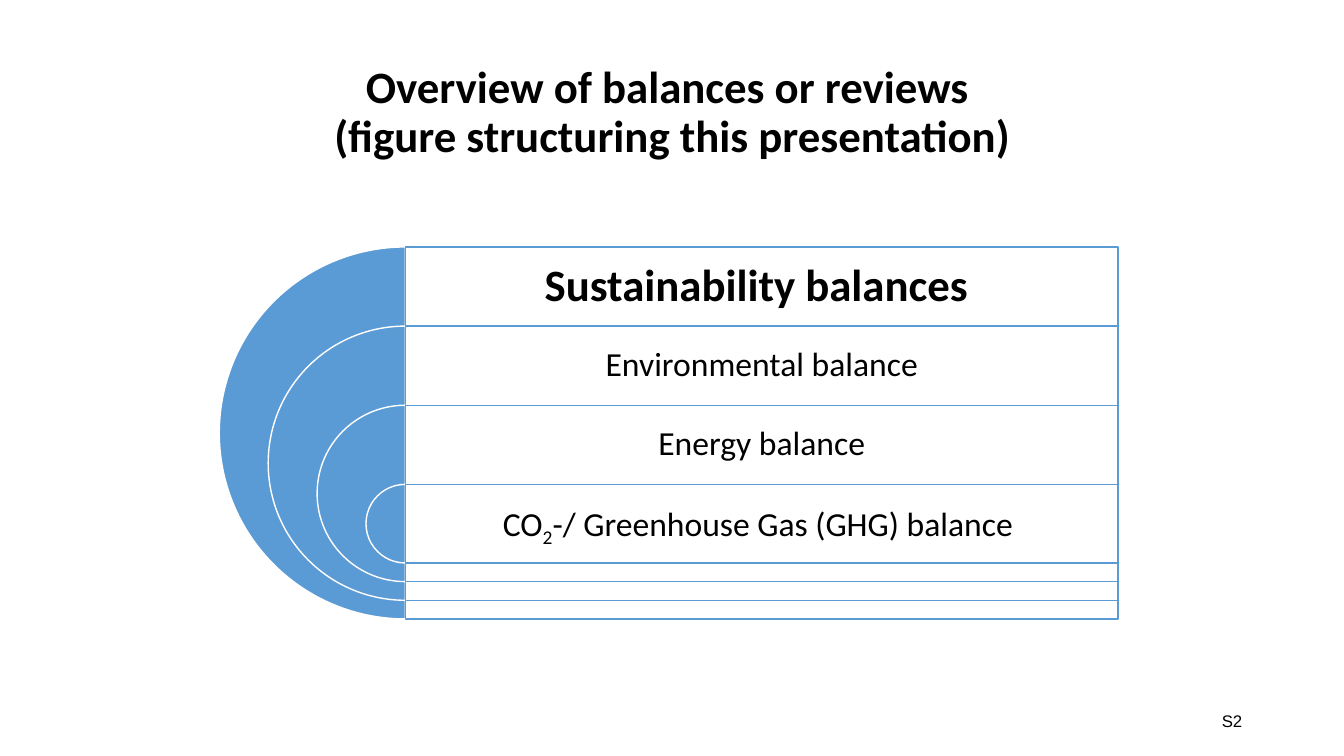
from dataclasses import dataclass

from lxml.etree import SubElement
from pptx import Presentation
from pptx.dml.color import RGBColor
from pptx.enum.shapes import MSO_SHAPE
from pptx.enum.text import MSO_ANCHOR, PP_ALIGN
from pptx.oxml.ns import qn
from pptx.util import Inches, Pt

BLUE, WHITE, BLACK = "5B9BD5", "FFFFFF", "000000"
CENTER_X, TOP, ROW_HEIGHT = 4.02, 2.45, 0.785
OUTER_DIAMETER, DIAMETER_STEP, BAND_WIDTH = 3.69, 0.97, 7.07
SUBSCRIPT = "-25000"


@dataclass(frozen=True)
class Span:
    text: str
    baseline: str = "0"


@dataclass(frozen=True)
class Label:
    lines: list[list[Span]]
    size: int
    bold: bool = False
    font: str = "Calibri"
    align: PP_ALIGN = PP_ALIGN.CENTER
    spacing: float = 0.9
    margin: float = 0.1


@dataclass(frozen=True)
class Frame:
    left: float
    top: float
    width: float
    height: float

    def lengths(self) -> list[int]:
        return [Inches(v) for v in (self.left, self.top, self.width, self.height)]


TITLE = Label([[Span("Overview of balances or reviews ")],
               [Span("(figure structuring this presentation)")]], 32, bold=True)
PAGE_NUMBER = Label([[Span("S2")]], 12, font="Arial", align=PP_ALIGN.RIGHT, spacing=1.0)
BALANCES = [
    Label([[Span("Sustainability balances ")]], 32, bold=True, margin=0.13),
    Label([[Span("Environmental balance")]], 24),
    Label([[Span("Energy balance")]], 24),
    Label([[Span("CO"), Span("2", SUBSCRIPT),
            Span("-/ Greenhouse Gas (GHG) balance ")]], 24),
]


def color(value: str) -> RGBColor:
    return RGBColor.from_string(value)


def apply(target, values: dict) -> None:
    for name, value in values.items():
        setattr(target, name, value)


def add_label(shapes, frame: Frame, label: Label) -> None:
    box = shapes.add_textbox(*frame.lengths()).text_frame
    margin = Inches(label.margin)
    apply(box, {"word_wrap": True, "vertical_anchor": MSO_ANCHOR.MIDDLE,
                "margin_left": margin, "margin_right": margin,
                "margin_top": margin, "margin_bottom": margin})
    para = box.paragraphs[0]
    apply(para, {"alignment": label.align, "line_spacing": label.spacing})
    apply(para.font, {"size": Pt(label.size)})
    for number, line in enumerate(label.lines):
        if number:
            para.add_line_break()
        for piece in line:
            span = para.add_run()
            span.text = piece.text
            apply(span.font, {"name": label.font, "size": Pt(label.size),
                              "bold": label.bold})
            span.font.color.rgb = color(BLACK)
            if piece.baseline != "0":
                span._r.get_or_add_rPr().set("baseline", piece.baseline)


def add_outline(shapes, kind: MSO_SHAPE, frame: Frame, fill: str, line: str):
    shape = shapes.add_shape(kind, *frame.lengths())
    shape.shadow.inherit = False
    shape.fill.solid()
    shape.fill.fore_color.rgb = color(fill)
    shape.line.color.rgb = color(line)
    shape.line.width = Pt(1)
    return shape


def add_balance(shapes, level: int, label: Label) -> None:
    top = TOP + level * ROW_HEIGHT
    diameter = OUTER_DIAMETER - level * DIAMETER_STEP
    # Left half disc, from 90 to 270 degrees
    disc = add_outline(shapes, MSO_SHAPE.PIE,
                       Frame(CENTER_X - diameter / 2, top, diameter, diameter), BLUE, WHITE)
    disc.adjustments[0], disc.adjustments[1] = 54, 162
    # Slightly transparent band
    band = add_outline(shapes, MSO_SHAPE.RECTANGLE,
                       Frame(CENTER_X, top, BAND_WIDTH, diameter), WHITE, BLUE)
    tint = band._element.spPr.find(qn("a:solidFill"))[0]
    SubElement(tint, qn("a:alpha")).set("val", "90000")
    add_label(shapes, Frame(CENTER_X, top, BAND_WIDTH, ROW_HEIGHT), label)


def main() -> None:
    deck = Presentation()
    apply(deck, {"slide_width": Inches(13.33), "slide_height": Inches(7.5)})
    page = deck.slides.add_slide(deck.slide_layouts[6])

    # Title and page number
    add_label(page.shapes, Frame(0.92, 0.4, 11.5, 1.45), TITLE)
    add_label(page.shapes, Frame(9.42, 6.95, 3, 0.4), PAGE_NUMBER)

    # Nested balances, outermost first
    diagram = page.shapes.add_group_shape()
    for level, label in enumerate(BALANCES):
        add_balance(diagram.shapes, level, label)

    deck.save("out.pptx")


if __name__ == "__main__":
    main()
